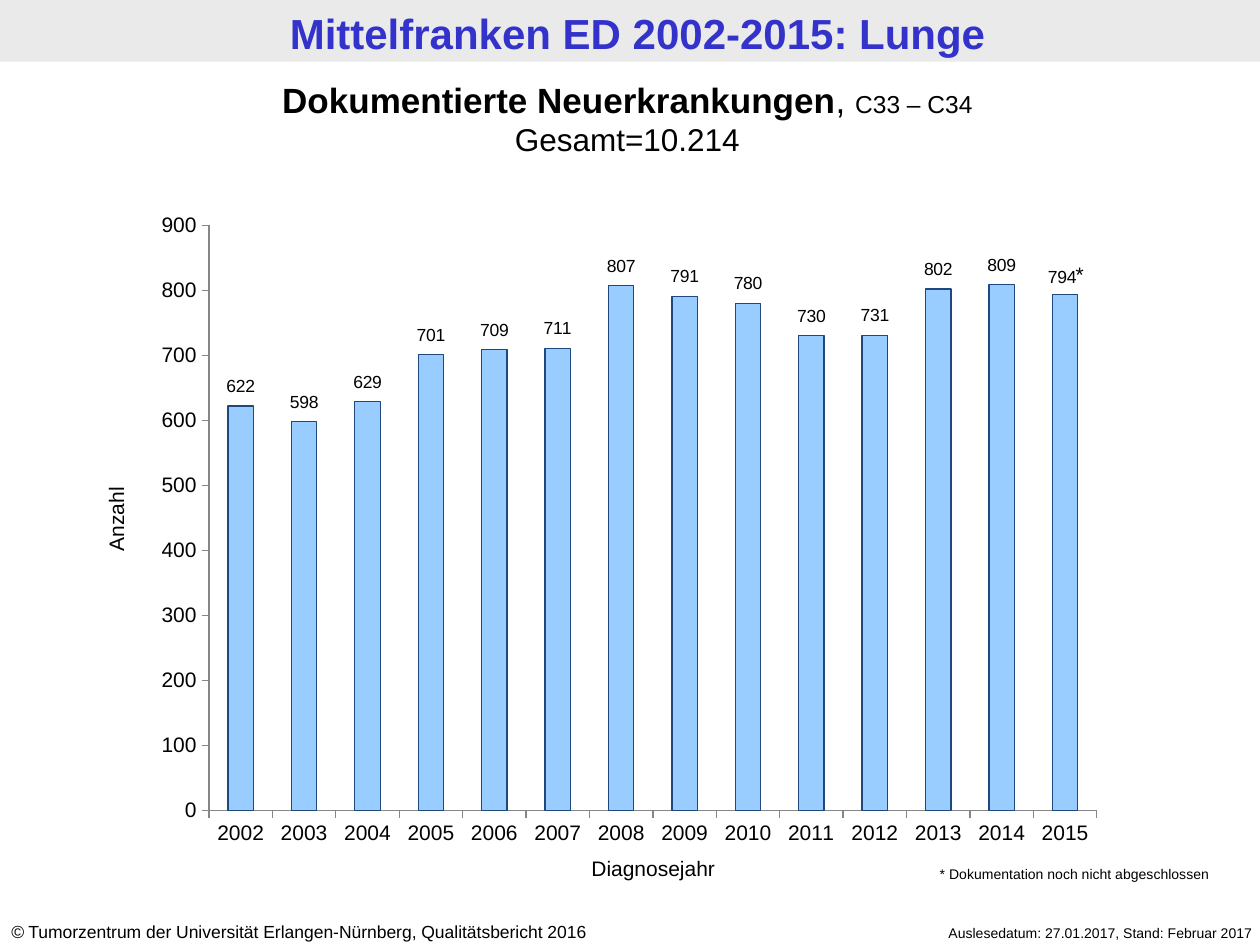
import dataclasses
import typing

import lxml.etree
import pptx
import pptx.chart.data
import pptx.dml.color
import pptx.enum.chart
import pptx.enum.shapes
import pptx.enum.text
import pptx.oxml.ns
import pptx.util

WIDTH, HEIGHT = pptx.util.Inches(10), pptx.util.Inches(7.5)
COLUMNS, ROWS = 100, 75
FONT = "Arial"
BLACK = "000000"
CASES = dict(zip(
    range(2002, 2016),
    (622, 598, 629, 701, 709, 711, 807, 791, 780, 730, 731, 802, 809, 794),
))
AXIS_MAXIMUM = 900
PLOT = {"x": 0.066, "y": 0.029, "w": 0.914, "h": 0.903}
LABEL_GAP = 0.03
LABEL_SHIFTS = {2015: (-0.003, 0.004)}
ALIGN = pptx.enum.text.PP_ALIGN


class Area(typing.NamedTuple):
    left: float
    top: float
    width: float
    height: float

    def lengths(self) -> tuple[int, ...]:
        column, row = WIDTH / COLUMNS, HEIGHT / ROWS
        return (round(self.left * column), round(self.top * row),
                round(self.width * column), round(self.height * row))


class Span(typing.NamedTuple):
    text: str
    size: float
    bold: bool = False
    italic: bool = False
    colour: str = BLACK


@dataclasses.dataclass
class Caption:
    area: Area
    lines: list[list[Span]]
    align: ALIGN = ALIGN.LEFT
    rotation: float = 0


CAPTIONS = [
    Caption(Area(0.6, 0.1, 100, 4.9),
            [[Span("Mittelfranken ED 2002-2015: Lunge", 24, True, colour="3333CC")]],
            ALIGN.CENTER),
    Caption(Area(-0.1, 72.6, 52.4, 2.7),
            [[Span("©", 10, italic=True),
              Span(" Tumorzentrum der Universität Erlangen-Nürnberg, "
                   "Qualitätsbericht 2016", 10)]]),
    Caption(Area(66.5, 72.9, 33.9, 2.4),
            [[Span("Auslesedatum: 27.01.2017, Stand: Februar 2017", 8)]], ALIGN.RIGHT),
    Caption(Area(-0.4, 5.7, 100.4, 7.4),
            [[Span("Dokumentierte Neuerkrankungen", 20, True), Span(", ", 20),
              Span("C33 – C34", 14)],
             [Span("Gesamt=10.214", 18)]], ALIGN.CENTER),
    Caption(Area(40.6, 67.4, 22.5, 3), [[Span("Diagnosejahr", 12)]], ALIGN.CENTER),
    Caption(Area(3.1, 39.7, 12.2, 3), [[Span("Anzahl", 12)]], ALIGN.CENTER, 270),
    Caption(Area(83.1, 20.3, 3.9, 3), [[Span("*", 12)]], ALIGN.RIGHT),
    Caption(Area(73.6, 68.2, 25.2, 2.4),
            [[Span("* Dokumentation noch nicht abgeschlossen", 8)]]),
]


def colour(value: str) -> pptx.dml.color.RGBColor:
    return pptx.dml.color.RGBColor.from_string(value)


def style_font(font, size: float, value: str = BLACK) -> None:
    font.name = FONT
    font.size = pptx.util.Pt(size)
    font.color.rgb = colour(value)


def draw_band(page, area: Area, fill: str) -> None:
    band = page.shapes.add_shape(
        pptx.enum.shapes.MSO_SHAPE.RECTANGLE, *area.lengths())
    band.shadow.inherit = False
    band.fill.solid()
    band.fill.fore_color.rgb = colour(fill)
    band.line.fill.background()


def draw_caption(page, caption: Caption) -> None:
    box = page.shapes.add_textbox(*caption.area.lengths())
    box.rotation = caption.rotation
    frame = box.text_frame
    frame.word_wrap = True
    frame.text = "\n".join("".join(span.text for span in line) for line in caption.lines)
    for para, line in zip(frame.paragraphs, caption.lines):
        para.alignment = caption.align
        para.text = ""
        for span in line:
            run = para.add_run()
            run.text = span.text
            style_font(run.font, span.size, span.colour)
            run.font.bold = span.bold
            run.font.italic = span.italic


def place(parent, index: int, **settings: typing.Any) -> None:
    for old in parent.findall(pptx.oxml.ns.qn("c:layout")):
        parent.remove(old)
    layout = lxml.etree.Element(pptx.oxml.ns.qn("c:layout"))
    manual = lxml.etree.SubElement(layout, pptx.oxml.ns.qn("c:manualLayout"))
    for name, value in settings.items():
        lxml.etree.SubElement(manual, pptx.oxml.ns.qn(f"c:{name}")).set("val", str(value))
    parent.insert(index, layout)


def style_axis(axis) -> None:
    axis.has_major_gridlines = False
    axis.major_tick_mark = pptx.enum.chart.XL_TICK_MARK.OUTSIDE
    axis.minor_tick_mark = pptx.enum.chart.XL_TICK_MARK.NONE
    axis.format.line.color.rgb = colour("868686")
    style_font(axis.tick_labels.font, 12)


def hide_leader_lines(labels) -> None:
    tag = pptx.oxml.ns.qn("c:showLeaderLines")
    setting = labels._element.find(tag)
    if setting is None:
        setting = lxml.etree.SubElement(labels._element, tag)
    setting.set("val", "0")


def label_bars(series) -> None:
    labels = series.data_labels
    labels.show_value = True
    style_font(labels.font, 10)
    hide_leader_lines(labels)
    for index, (year, value) in enumerate(CASES.items()):
        style_font(series.points[index].data_label.font, 10)
        right, down = LABEL_SHIFTS.get(year, (0, 0))
        rise = value / AXIS_MAXIMUM * PLOT["h"] / 2 + LABEL_GAP
        for element in labels._element.findall(pptx.oxml.ns.qn("c:dLbl")):
            if element.find(pptx.oxml.ns.qn("c:idx")).get("val") == str(index):
                place(element, 1, x=right, y=round(down - rise, 4))


def draw_chart(page, area: Area) -> None:
    data = pptx.chart.data.CategoryChartData()
    data.categories = [str(year) for year in CASES]
    data.add_series("Series 1", CASES.values())
    chart = page.shapes.add_chart(
        pptx.enum.chart.XL_CHART_TYPE.COLUMN_STACKED, *area.lengths(), data).chart
    chart.has_legend = False
    chart.has_title = False
    style_font(chart.font, 12)
    style_axis(chart.category_axis)
    style_axis(chart.value_axis)
    chart.value_axis.minimum_scale = 0
    chart.value_axis.maximum_scale = AXIS_MAXIMUM
    chart.value_axis.major_unit = 100
    plot = chart.plots[0]
    plot.vary_by_categories = False
    plot.gap_width = 150
    plot.overlap = 100
    series = plot.series[0]
    series.format.fill.solid()
    series.format.fill.fore_color.rgb = colour("99CCFF")
    series.format.line.color.rgb = colour("1F497D")
    series.format.line.width = pptx.util.Pt(0.75)
    label_bars(series)
    place(chart._chartSpace.chart.plotArea, 0, layoutTarget="inner",
          xMode="edge", yMode="edge", **PLOT)


def main() -> None:
    deck = pptx.Presentation()
    deck.slide_width, deck.slide_height = WIDTH, HEIGHT
    page = deck.slides.add_slide(deck.slide_layouts[6])
    draw_band(page, Area(0, 0, 100, 4.9), "EAEAEA")
    draw_chart(page, Area(11.5, 16.4, 77.1, 51.4))
    for caption in CAPTIONS:
        draw_caption(page, caption)
    deck.save("out.pptx")


if __name__ == "__main__":
    main()
